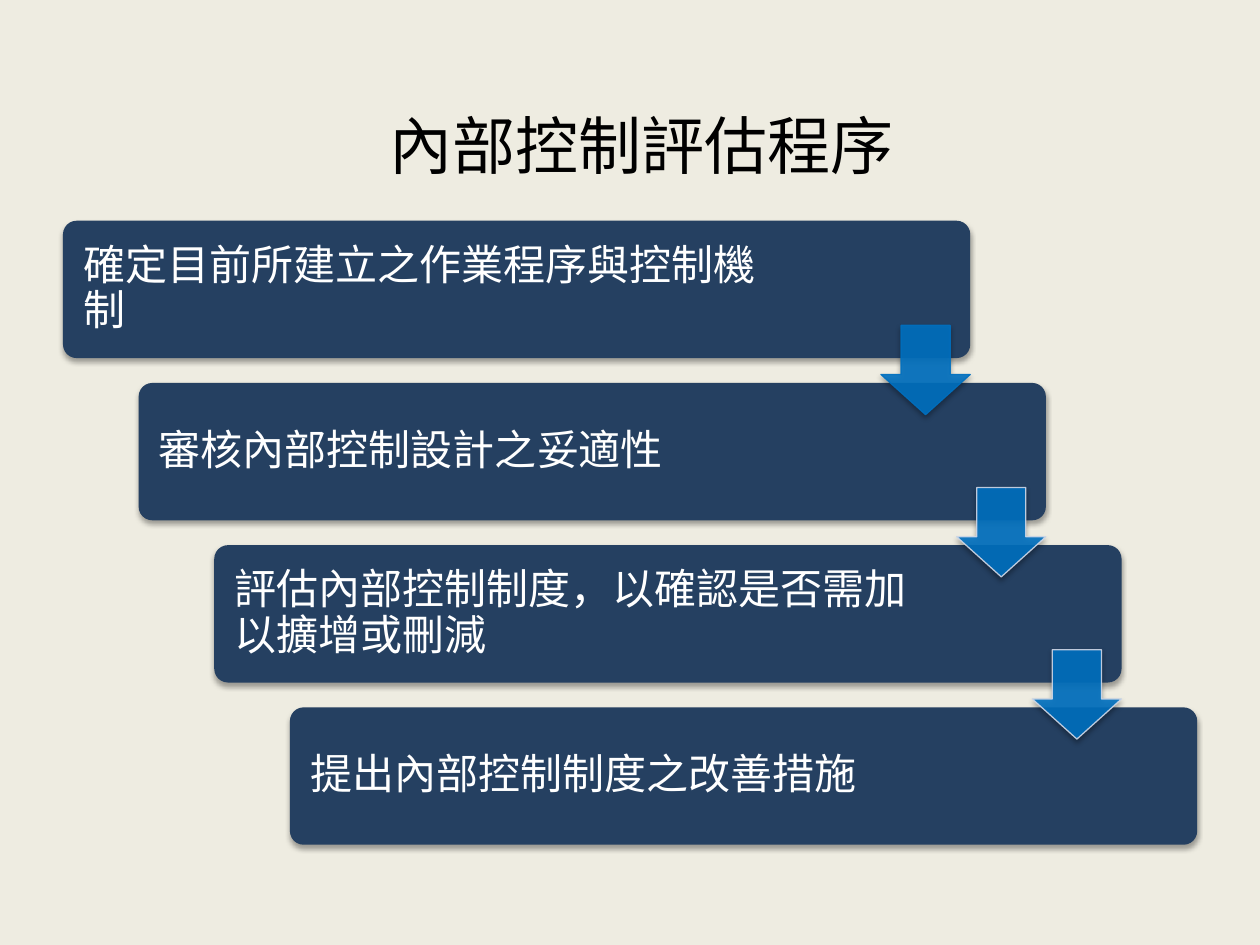
from lxml import etree
from pptx import Presentation
from pptx.dml.color import RGBColor
from pptx.enum.shapes import MSO_SHAPE
from pptx.enum.text import MSO_ANCHOR, PP_ALIGN
from pptx.oxml.ns import qn
from pptx.util import Cm, Pt

TITLE = "內部控制評估程序"
# Step text and the width it may fill, in cm
STEPS = [
    ("確定目前所建立之作業程序與控制機制", 14.55),
    ("審核內部控制設計之妥適性", 14.3),
    ("評估內部控制制度，以確認是否需加以擴增或刪減", 14.3),
    ("提出內部控制制度之改善措施", 14.3),
]
EDGES = ["0070C0", "D0D8E8", "D0D8E8"]  # arrow outlines

LEFT, TOP = 1.27, 4.45
STEP_X, STEP_Y = 1.525, 3.27
BOX_W, BOX_H = 18.29, 2.77
ARROW = 1.8
ARROW_Y = 2.11  # from the top of the box above
PAD = 0.33


def rgb(code):
    return RGBColor.from_string(code)


def style(run, size, color):
    run.font.name = "Arial"
    run.font.size = Pt(size)
    run.font.color.rgb = rgb(color)


def add_shadow(shape):
    """Give the shape a soft shadow straight below it."""
    effects = etree.SubElement(shape._element.spPr, qn("a:effectLst"))
    outer = etree.SubElement(effects, qn("a:outerShdw"), blurRad=str(Pt(3.1)),
                             dist=str(Pt(1.8)), dir="5400000", rotWithShape="0")
    color = etree.SubElement(outer, qn("a:srgbClr"), val="000000")
    etree.SubElement(color, qn("a:alpha"), val="35000")


def fade(fill, percent):
    """Set the opacity of a solid fill."""
    color = fill._xPr.find(qn("a:solidFill"))[0]
    etree.SubElement(color, qn("a:alpha"), val=str(percent * 1000))


def add_step(slide, x, y, text, width):
    box = slide.shapes.add_shape(MSO_SHAPE.ROUNDED_RECTANGLE,
                                 Cm(x), Cm(y), Cm(BOX_W), Cm(BOX_H))
    box.adjustments[0] = 0.1
    box.fill.solid()
    box.fill.fore_color.rgb = rgb("254061")
    box.line.fill.background()
    add_shadow(box)
    frame = box.text_frame
    frame.text = text
    frame.word_wrap = True
    frame.vertical_anchor = MSO_ANCHOR.MIDDLE
    frame.margin_left = Cm(PAD)
    frame.margin_right = Cm(BOX_W - PAD - width)
    para = frame.paragraphs[0]
    para.alignment = PP_ALIGN.LEFT
    para.line_spacing = 0.9
    style(para.runs[0], 24, "FFFFFF")


def add_arrow(slide, x, y, edge):
    arrow = slide.shapes.add_shape(MSO_SHAPE.DOWN_ARROW,
                                   Cm(x), Cm(y), Cm(ARROW), Cm(ARROW))
    arrow.adjustments[0] = 0.55
    arrow.adjustments[1] = 0.45
    arrow.fill.solid()
    arrow.fill.fore_color.rgb = rgb("0070C0")
    arrow.line.color.rgb = rgb(edge)
    arrow.line.width = Pt(0.75)
    fade(arrow.fill, 90)
    fade(arrow.line.fill, 90)
    add_shadow(arrow)


def main():
    deck = Presentation()
    deck.slide_width, deck.slide_height = Cm(25.4), Cm(19.05)
    slide = deck.slides.add_slide(deck.slide_layouts[5])
    slide.background.fill.solid()
    slide.background.fill.fore_color.rgb = rgb("EEECE1")

    title = slide.shapes.title
    title.left, title.top = Cm(1.5), Cm(1.32)
    title.width, title.height = Cm(22.86), Cm(3.18)
    title.text_frame.text = TITLE
    title.text_frame.vertical_anchor = MSO_ANCHOR.MIDDLE
    para = title.text_frame.paragraphs[0]
    para.alignment = PP_ALIGN.CENTER
    style(para.runs[0], 36, "000000")

    spots = [(LEFT + i * STEP_X, TOP + i * STEP_Y) for i in range(len(STEPS))]
    for (x, y), (text, width) in zip(spots, STEPS):
        add_step(slide, x, y, text, width)
    for (x, y), edge in zip(spots, EDGES):
        add_arrow(slide, x + BOX_W - ARROW, y + ARROW_Y, edge)

    deck.save("out.pptx")


if __name__ == "__main__":
    main()
